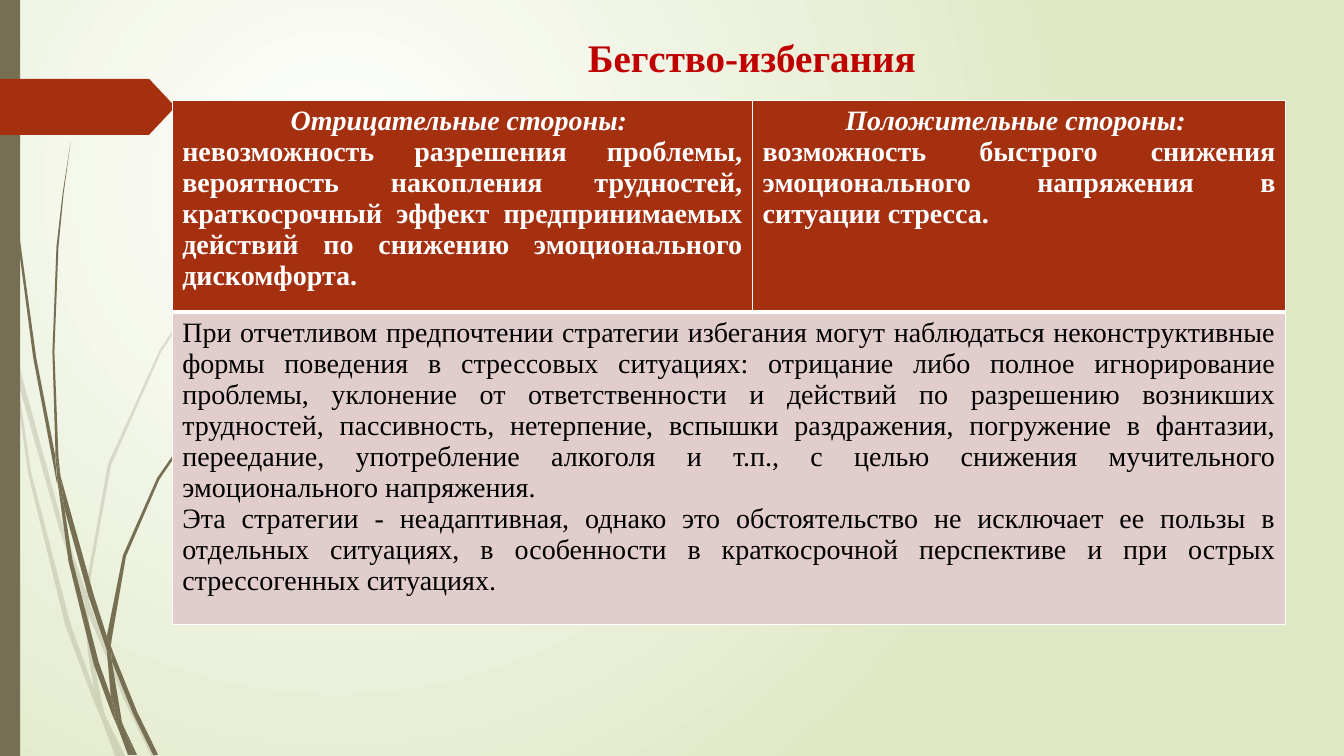
from pptx import Presentation
from pptx.dml.color import RGBColor
from pptx.enum.shapes import MSO_SHAPE
from pptx.enum.text import MSO_ANCHOR, PP_ALIGN
from pptx.oxml.ns import qn
from pptx.util import Pt
from lxml.etree import SubElement

HUES = {
    "white": "FFFFFF", "black": "000000", "sage": "DFE8C4",
    "olive": "766F54", "rust": "A53010", "red": "C00000", "rose": "E1CDCC",
}
FONT = "Times New Roman"
UNIT = Pt(0.72)

LIGHT = [
    [(11, 350), (9, 322), (0, 282), (0, 299), (10, 344)],
    [(58, 522), (84, 599), (85, 586), (62, 520), (14, 345), (17, 376)],
    [(92, 607), (88, 596), (88, 610), (123, 694), (150, 750), (155, 750),
     (127, 692)],
    [(119, 750), (124, 750), (105, 711)],
    [(93, 683), (70, 619), (31, 469), (17, 376), (11, 350), (28, 470),
     (65, 621), (92, 693), (101, 714), (99, 707)],
    [(84, 599), (87, 646), (93, 683), (96, 692), (105, 711), (103, 706),
     (91, 646), (88, 610), (88, 608)],
    [(88, 584), (110, 462), (160, 349), (229, 245), (268, 198), (290, 175),
     (312, 154), (312, 153), (289, 175), (268, 197), (228, 244), (158, 348),
     (107, 461), (85, 584), (85, 586), (88, 596)],
    [(101, 714), (114, 750), (119, 750)],
    [(88, 608), (88, 610), (88, 596), (85, 586), (84, 599)],
    [(96, 692), (93, 683), (99, 707), (101, 714), (119, 750), (105, 711)],
]
DARK = [
    [(7, 110), (17, 233), (33, 355), (56, 477), (57, 481), (55, 457),
     (55, 453), (36, 355), (19, 232), (8, 109), (5, 48), (4, 0), (3, 0),
     (4, 48)],
    [(88, 592), (106, 645), (106, 633), (106, 631), (93, 590), (60, 472),
     (64, 505)],
    [(113, 649), (110, 641), (111, 656), (132, 708), (152, 749), (157, 749),
     (136, 706)],
    [(110, 691), (98, 657), (72, 556), (64, 505), (57, 477), (68, 557),
     (93, 659), (111, 708), (117, 722), (116, 717)],
    [(60, 472), (58, 453), (54, 349), (58, 245), (63, 193), (70, 141),
     (62, 193), (56, 245), (52, 349), (55, 449)],
    [(133, 749), (136, 749), (122, 719)],
    [(57, 477), (64, 505), (60, 472), (55, 449), (55, 453)],
    [(111, 633), (125, 552), (158, 476), (205, 406), (231, 374), (245, 359),
     (261, 344), (260, 344), (245, 358), (231, 373), (204, 405), (156, 474),
     (122, 551), (106, 631), (110, 641)],
    [(117, 722), (127, 749), (131, 749)],
    [(106, 645), (110, 691), (116, 706), (122, 719), (121, 716), (111, 656),
     (109, 651)],
    [(106, 645), (109, 651), (111, 656), (110, 641), (106, 631), (106, 633)],
    [(116, 706), (110, 691), (116, 717), (117, 722), (130, 749), (133, 749),
     (122, 719)],
]

MINUS = [
    ("Отрицательные стороны: ", PP_ALIGN.CENTER, True),
    ("невозможность разрешения проблемы, вероятность накопления трудностей, "
     "краткосрочный эффект предпринимаемых действий по снижению "
     "эмоционального дискомфорта.", PP_ALIGN.JUSTIFY, False),
]
PLUS = [
    ("Положительные стороны: ", PP_ALIGN.CENTER, True),
    ("возможность быстрого снижения эмоционального напряжения в ситуации "
     "стресса. ", PP_ALIGN.JUSTIFY, False),
]
NOTES = [
    ("При отчетливом предпочтении стратегии избегания могут наблюдаться "
     "неконструктивные формы поведения в стрессовых ситуациях: отрицание либо "
     "полное игнорирование проблемы, уклонение от ответственности и действий "
     "по разрешению возникших трудностей, пассивность, нетерпение, вспышки "
     "раздражения, погружение в фантазии, переедание, употребление алкоголя "
     "и т.п., с целью снижения мучительного эмоционального напряжения. ",
     PP_ALIGN.JUSTIFY, False),
    ("Эта стратегии - неадаптивная, однако это обстоятельство не исключает ее "
     "пользы в отдельных ситуациях, в особенности в краткосрочной перспективе "
     "и при острых стрессогенных ситуациях.", PP_ALIGN.JUSTIFY, False),
]


def hue(name):
    return RGBColor.from_string(HUES[name])


def write(para, text, size=20, color="black", bold=False, slant=False,
          align=PP_ALIGN.CENTER):
    para.alignment = align
    run = para.add_run()
    run.text = text
    font = run.font
    font.name, font.size = FONT, Pt(size)
    font.bold, font.italic = bold, slant
    font.color.rgb = hue(color)


def paint(shape, color, alpha=None):
    shape.shadow.inherit = False
    shape.fill.solid()
    shape.fill.fore_color.rgb = hue(color)
    shape.line.fill.background()
    if alpha:
        tint = shape.fill._xPr.find(".//" + qn("a:srgbClr"))
        SubElement(tint, qn("a:alpha"), val=str(alpha * 1000))


def block(slide, kind, left, top, width, height, color):
    shape = slide.shapes.add_shape(kind, Pt(left), Pt(top), Pt(width), Pt(height))
    paint(shape, color)
    return shape


def grass(slide, blades, alpha=None):
    group = slide.shapes.add_group_shape()
    for edge in blades:
        form = group.shapes.build_freeform(*edge[0], scale=UNIT)
        form.add_line_segments(edge[1:], close=True)
        paint(form.convert_to_shape(), "olive", alpha)


def glow(slide):
    fill = slide.background.fill
    fill.gradient()
    for stop, color in zip(fill.gradient_stops, ("white", "sage")):
        stop.color.rgb = hue(color)
    grad = slide._element.find(".//" + qn("a:gradFill"))
    grad.remove(grad.find(qn("a:lin")))
    ring = SubElement(grad, qn("a:path"), path="circle")
    SubElement(ring, qn("a:fillToRect"), l="50000", t="50000",
               r="100000", b="100000")


def frame(cell, top, base):
    props = cell._tc.get_or_add_tcPr()
    for spot, (side, width) in enumerate(zip("LRTB", (1, 1, top, base))):
        line = SubElement(props, qn("a:ln" + side), w=str(Pt(width)))
        fill = SubElement(line, qn("a:solidFill"))
        SubElement(fill, qn("a:srgbClr"), val=HUES["white"])
        props.insert(spot, line)


def fill_cell(cell, lines, back, color, bold):
    cell.fill.solid()
    cell.fill.fore_color.rgb = hue(back)
    body = cell.text_frame
    for spot, (text, align, slant) in enumerate(lines):
        para = body.add_paragraph() if spot else body.paragraphs[0]
        write(para, text, color=color, bold=bold, slant=slant, align=align)


def grid(slide):
    table = slide.shapes.add_table(2, 2, Pt(123), Pt(71.7), Pt(795.4), Pt(274)).table
    for col, width in zip(table.columns, (414.6, 380.8)):
        col.width = Pt(width)
    for row, height in zip(table.rows, (149.6, 124.6)):
        row.height = Pt(height)
    table.cell(1, 0).merge(table.cell(1, 1))
    fill_cell(table.cell(0, 0), MINUS, "rust", "white", True)
    fill_cell(table.cell(0, 1), PLUS, "rust", "white", True)
    fill_cell(table.cell(1, 0), NOTES, "rose", "black", False)
    for row, (top, base) in enumerate(((1, 3), (3, 1))):
        for col in range(2):
            frame(table.cell(row, col), top, base)


def title(slide, text):
    box = slide.shapes.add_textbox(Pt(172), Pt(18.6), Pt(737), Pt(44)).text_frame
    box.word_wrap = True
    box.vertical_anchor = MSO_ANCHOR.MIDDLE
    write(box.paragraphs[0], text, size=27.9, color="red", bold=True)


def main():
    deck = Presentation()
    deck.slide_width, deck.slide_height = Pt(960), Pt(540)
    slide = deck.slides.add_slide(deck.slide_layouts[6])
    glow(slide)
    grass(slide, LIGHT, 20)
    grass(slide, DARK)
    block(slide, MSO_SHAPE.RECTANGLE, 0, 0, 14.4, 540, "olive")
    tag = block(slide, MSO_SHAPE.PENTAGON, 0, 56.3, 125.3, 40, "rust")
    tag.adjustments[0] = 0.47
    title(slide, "Бегство-избегания ")
    grid(slide)
    deck.save("out.pptx")


if __name__ == "__main__":
    main()
